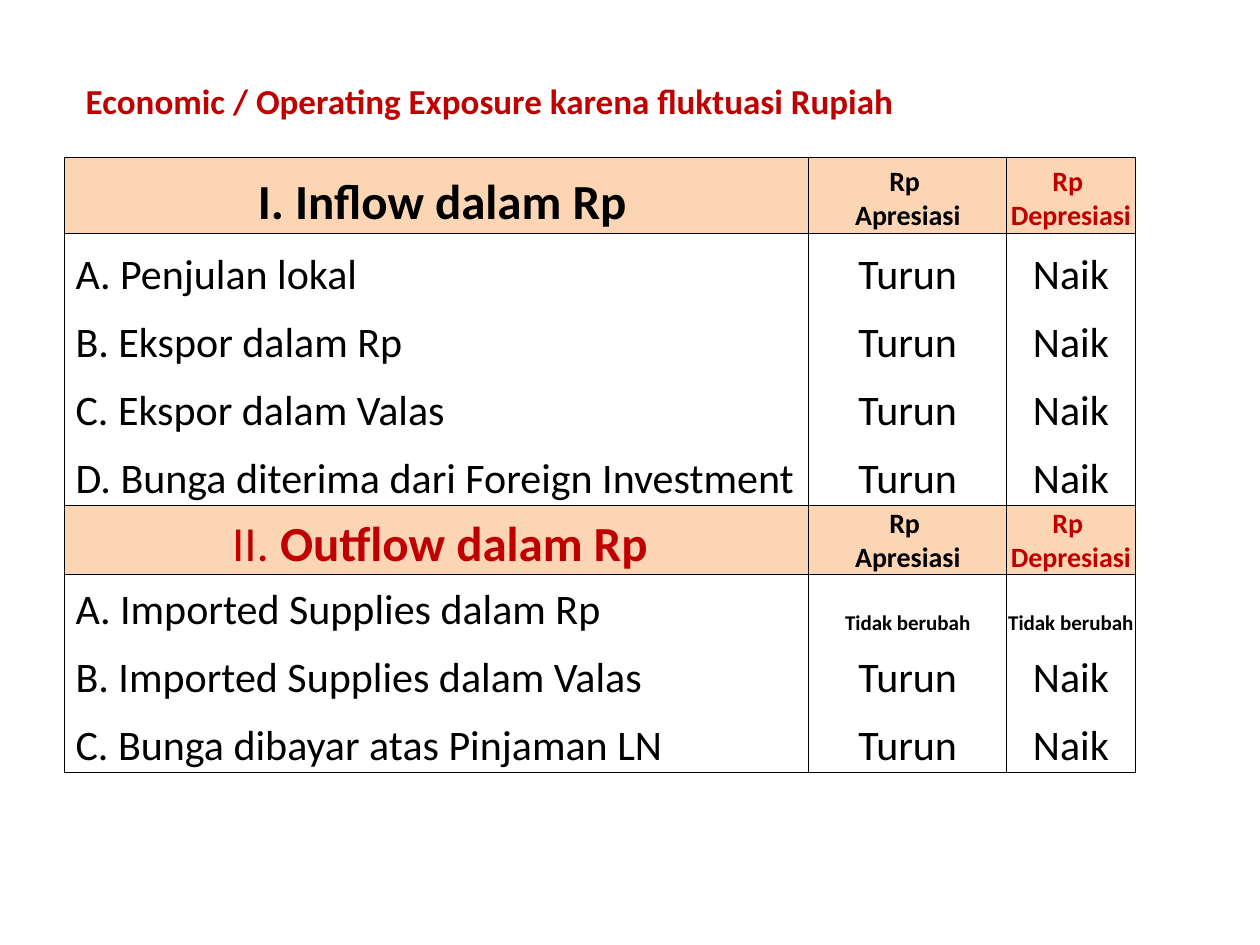
from lxml.etree import SubElement
from pptx import Presentation
from pptx.dml.color import RGBColor
from pptx.enum.text import MSO_ANCHOR, PP_ALIGN
from pptx.oxml.ns import qn
from pptx.util import Inches, Pt

FONT = "Calibri"
BLACK, RED, PEACH = "000000", "C00000", "FCD5B4"
TITLE = "Economic / Operating Exposure karena fluktuasi Rupiah"

# Each section: heading runs (text, size, bold, colour), then its rows
SECTIONS = [
    ([(" I. Inflow dalam Rp", 28, True, BLACK)], [
        ("A. Penjulan lokal", "Turun", "Naik"),
        ("B. Ekspor dalam Rp", "Turun", "Naik"),
        ("C. Ekspor dalam Valas", "Turun", "Naik"),
        ("D. Bunga diterima dari Foreign Investment", "Turun", "Naik"),
    ]),
    ([(" ", 16, False, RED), ("II. ", 28, False, RED),
      ("Outflow dalam Rp", 28, True, RED)], [
        ("A. Imported Supplies dalam Rp", "Tidak berubah", "Tidak berubah"),
        ("B. Imported Supplies dalam Valas", "Turun", "Naik"),
        ("C. Bunga dibayar atas Pinjaman LN", "Turun", "Naik"),
    ]),
]
RATE_HEADINGS = [("Apresiasi", BLACK), ("Depresiasi", RED)]
COL_WIDTHS = [5.91, 1.57, 1.02]
ROW_HEIGHTS = [0.6, 0.54, 0.54, 0.54, 0.54, 0.55, 0.49, 0.54, 0.54]


def rgb(color):
    return RGBColor.from_string(color)


def add_run(p, text, size, bold, color):
    r = p.add_run()
    r.text = text
    r.font.name = FONT
    r.font.size = Pt(size)
    r.font.bold = bold
    r.font.color.rgb = rgb(color)


def set_borders(cell, top, bottom):
    """Draw the sides always, the top and bottom edges on request."""
    tc_pr = cell._tc.get_or_add_tcPr()
    for edge, visible in (("L", True), ("R", True), ("T", top), ("B", bottom)):
        ln = SubElement(tc_pr, qn(f"a:ln{edge}"), w=str(Pt(0.5)))
        if visible:
            fill = SubElement(ln, qn("a:solidFill"))
            SubElement(fill, qn("a:srgbClr"), val=BLACK)
        else:
            SubElement(ln, qn("a:noFill"))


def fill_cell(cell, paragraphs, align, fill=None, top=True, bottom=True, left=0.01):
    set_borders(cell, top, bottom)
    if fill:
        cell.fill.solid()
        cell.fill.fore_color.rgb = rgb(fill)
    else:
        cell.fill.background()
    cell.vertical_anchor = MSO_ANCHOR.BOTTOM
    cell.margin_left = Inches(left)
    cell.margin_right = cell.margin_top = Inches(0.01)
    cell.margin_bottom = 0
    tf = cell.text_frame
    for i, runs in enumerate(paragraphs):
        p = tf.add_paragraph() if i else tf.paragraphs[0]
        p.alignment = align
        for run in runs:
            add_run(p, *run)


prs = Presentation()
prs.slide_width, prs.slide_height = Inches(10), Inches(7.5)
s = prs.slides.add_slide(prs.slide_layouts[6])

# Title
tf = s.shapes.add_textbox(Inches(0.5), Inches(0.55), Inches(7.31), Inches(0.55)).text_frame
tf.word_wrap = True
tf.margin_left, tf.margin_top = Inches(0.18), Inches(0.08)
add_run(tf.paragraphs[0], TITLE, 20, True, RED)

# Table grid
table = s.shapes.add_table(
    len(ROW_HEIGHTS), len(COL_WIDTHS), Inches(0.51), Inches(1.25),
    Inches(sum(COL_WIDTHS)), Inches(sum(ROW_HEIGHTS))).table
table.first_row = table.horz_banding = False
for column, width in zip(table.columns, COL_WIDTHS):
    column.width = Inches(width)
for row, height in zip(table.rows, ROW_HEIGHTS):
    row.height = Inches(height)

# Sections: a shaded heading row, then a block of rows framed as one
row = 0
for heading, items in SECTIONS:
    fill_cell(table.cell(row, 0), [heading], PP_ALIGN.CENTER, PEACH)
    for col, (word, color) in enumerate(RATE_HEADINGS, 1):
        lines = [[(text, 16, True, color)] for text in ("Rp ", word)]
        fill_cell(table.cell(row, col), lines, PP_ALIGN.CENTER, PEACH)
    for i, item in enumerate(items):
        row += 1
        for col, text in enumerate(item):
            unchanged = text == "Tidak berubah"
            fill_cell(
                table.cell(row, col),
                [[(text, 12 if unchanged else 24, unchanged, BLACK)]],
                PP_ALIGN.CENTER if col else PP_ALIGN.LEFT,
                top=i == 0, bottom=i == len(items) - 1,
                left=0.01 if col else 0.09)
    row += 1

prs.save("out.pptx")
